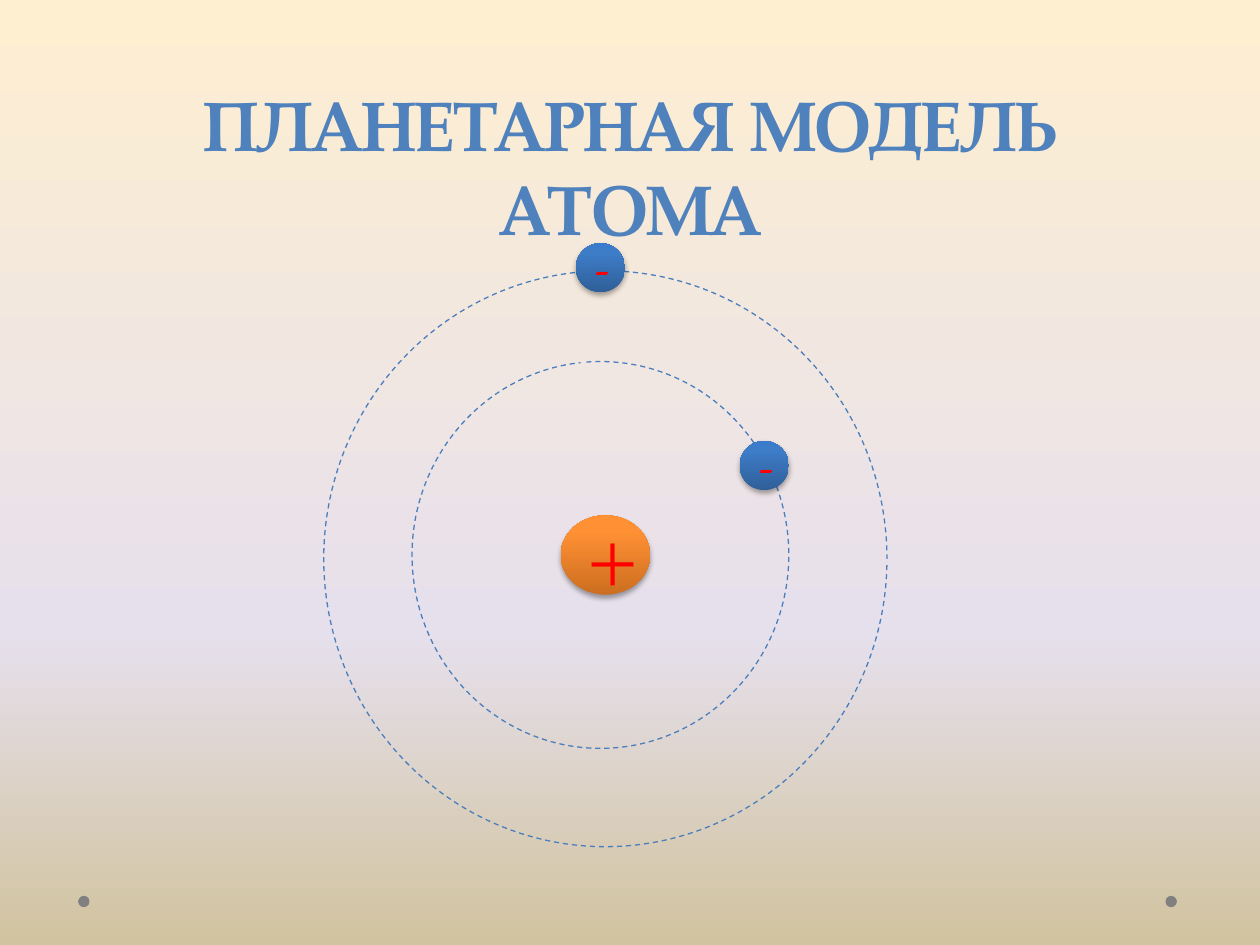
from copy import deepcopy
from lxml.etree import SubElement as Sub
from pptx import Presentation
from pptx.dml.color import RGBColor
from pptx.enum.dml import MSO_LINE as Dash
from pptx.enum.shapes import MSO_SHAPE as Geo
from pptx.enum.text import MSO_ANCHOR as Anchor, PP_ALIGN as Align
from pptx.oxml.ns import qn
from pptx.util import Inches, Pt

rgb = RGBColor.from_string


def blend(fill, root, stops, angle):
    """Give fill, found under root, a three-stop gradient; angle is counterclockwise."""
    fill.gradient()
    fill.gradient_angle = angle
    marks = next(root.iter(qn("a:gsLst")))
    marks.append(deepcopy(marks[-1]))
    for mark, (pos, color) in zip(fill.gradient_stops, stops):
        mark.position = pos
        mark.color.rgb = rgb(color)


def write(frame, text, size, color, bold=False):
    frame.word_wrap = True
    para = frame.paragraphs[0]
    para.alignment = Align.CENTER
    run = para.add_run()
    run.text = text
    font = run.font
    font.name, font.size, font.bold = "TeX Gyre Pagella", Pt(size), bold
    font.color.rgb = rgb(color)


deck = Presentation()
deck.slide_width, deck.slide_height = Inches(10), Inches(7.5)
slide = deck.slides.add_slide(deck.slide_layouts[6])
shapes = slide.shapes
blend(slide.background.fill, slide.element,
      [(0, "FFEFD1"), (0.67, "E6E0EC"), (1, "D1C39F")], 270)

# Footer dots
for left in (9.25, 0.62):
    dot = shapes.add_shape(Geo.OVAL, Inches(left), Inches(7.11), Inches(0.09), Inches(0.09))
    dot.shadow.inherit = False
    dot.fill.solid()
    dot.fill.fore_color.rgb = rgb("808080")
    dot.line.fill.background()

# Orbits
orbits = [
    (3.27, 2.87, 2.99, 3.07, 159.49, 158.45),
    (2.57, 2.15, 4.47, 4.57, 0.77, 0),
]
for *box, start, end in orbits:
    orbit = shapes.add_shape(Geo.ARC, *map(Inches, box))
    orbit.shadow.inherit = False
    orbit.adjustments[0], orbit.adjustments[1] = start, end
    orbit.fill.background()
    orbit.line.color.rgb = rgb("4B7EBC")
    orbit.line.width = Pt(0.75)
    orbit.line.dash_style = Dash.DASH

# Nucleus and electrons
warm = [(0, "CC6E20"), (0.8, "FF9034"), (1, "FF9136")]
cool = [(0, "2F5F99"), (0.8, "3D7CC7"), (1, "3A7CCB")]
balls = [
    (4.45, 4.09, 0.71, 0.63, "+", 40, warm),
    (5.87, 3.5, 0.39, 0.39, "-", 24, cool),
    (4.57, 1.93, 0.39, 0.39, "-", 24, cool),
]
for *box, sign, size, stops in balls:
    ball = shapes.add_shape(Geo.OVAL, *map(Inches, box))
    ball.shadow.inherit = False
    blend(ball.fill, ball.element, stops, 90)
    ball.line.fill.background()
    effects = next(ball.element.iter(qn("a:effectLst")))
    shade = Sub(effects, qn("a:outerShdw"), blurRad=str(Pt(3.1)), dist=str(Pt(1.8)),
                dir="5400000", rotWithShape="0")
    black = Sub(shade, qn("a:srgbClr"), val="000000")
    Sub(black, qn("a:alpha"), val="35000")
    ball.text_frame.vertical_anchor = Anchor.MIDDLE
    write(ball.text_frame, sign, size, "FF0000")

title = shapes.add_textbox(Inches(0.59), Inches(0.6), Inches(8.82), Inches(0.94))
write(title.text_frame, "ПЛАНЕТАРНАЯ МОДЕЛЬ АТОМА", 40, "4F81BD", True)

deck.save("out.pptx")
